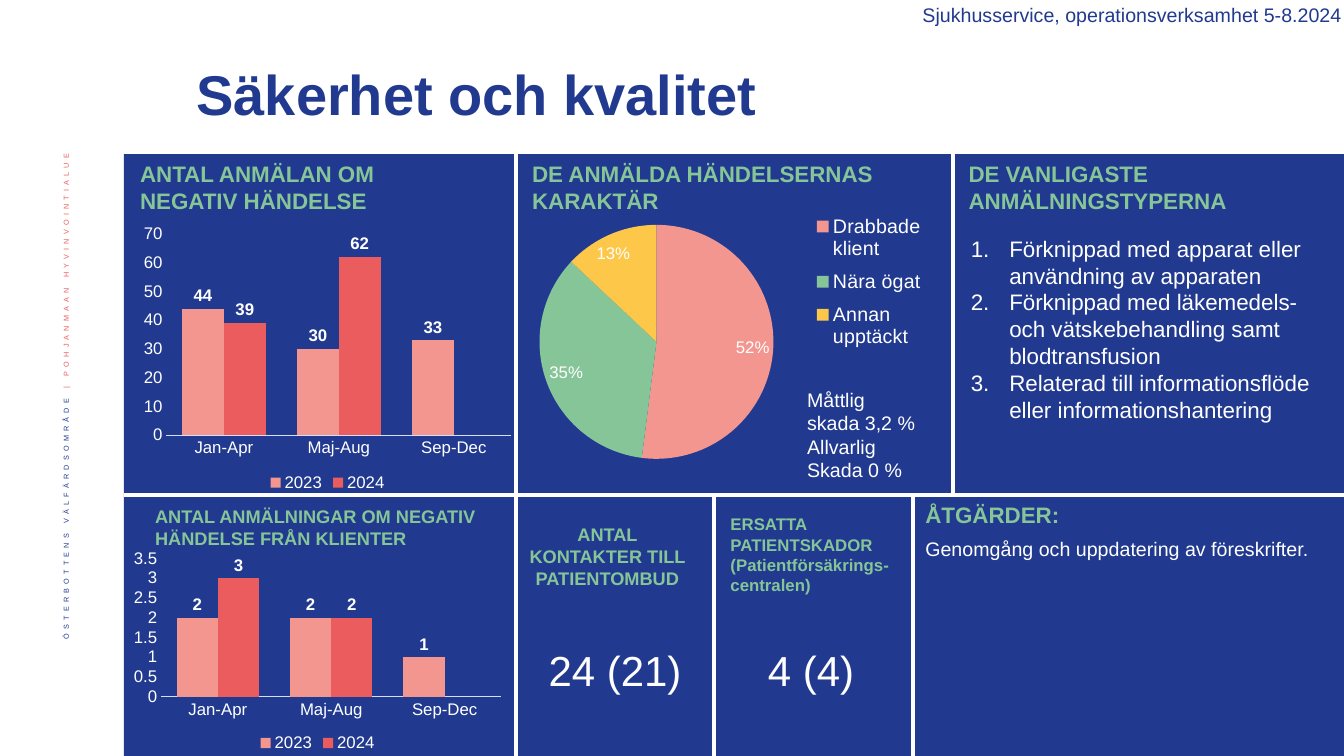
from dataclasses import dataclass

from lxml.etree import SubElement
from pptx import Presentation
from pptx.chart.data import CategoryChartData
from pptx.dml.color import RGBColor
from pptx.enum.chart import XL_CHART_TYPE, XL_LABEL_POSITION, XL_LEGEND_POSITION, XL_TICK_MARK
from pptx.enum.shapes import MSO_CONNECTOR, MSO_SHAPE
from pptx.enum.text import MSO_ANCHOR, MSO_AUTO_SIZE, PP_ALIGN
from pptx.oxml import parse_xml
from pptx.oxml.ns import nsdecls, qn
from pptx.util import Cm, Pt


@dataclass(frozen=True)
class Theme:
    font: str = "Arial"
    navy: RGBColor = RGBColor(0x21, 0x3A, 0x8F)
    white: RGBColor = RGBColor(0xFF, 0xFF, 0xFF)
    green: RGBColor = RGBColor(0x85, 0xC5, 0x98)
    pink: RGBColor = RGBColor(0xF3, 0x96, 0x90)
    red: RGBColor = RGBColor(0xEB, 0x5C, 0x5F)
    yellow: RGBColor = RGBColor(0xFD, 0xC8, 0x4A)
    axis: RGBColor = RGBColor(0xD6, 0xDD, 0xF6)
    title: Pt = Pt(40)
    figure: Pt = Pt(30)
    heading: Pt = Pt(16)
    body: Pt = Pt(14)
    subheading: Pt = Pt(13)
    small: Pt = Pt(12)
    side: Pt = Pt(9)


theme = Theme()


def style_font(font, size, color, bold=False):
    font.name, font.size, font.bold = theme.font, size, bold
    font.color.rgb = color


def fill_box(box, place, lines, size, color, bold=False, align=PP_ALIGN.LEFT):
    box.left, box.top, box.width, box.height = [Cm(length) for length in place]
    frame = box.text_frame
    frame.word_wrap = True
    frame.auto_size = MSO_AUTO_SIZE.NONE
    frame.text = "\n".join(lines)
    for para in frame.paragraphs:
        para.alignment = align
        para.space_before = Pt(0)
        style_font(para.font, size, color, bold)
    return frame


deck = Presentation()
deck.slide_width, deck.slide_height = Cm(33.87), Cm(19.05)
page = deck.slides.add_slide(deck.slide_layouts[1])
shapes = page.shapes

# Blue panel and white title band, both behind the placeholders
left, top, right, bottom = 3.12, 3.88, 33.87, 19.05
middle = 12.47
for depth, (place, color) in enumerate([
    ((left, 0, right - left, bottom), theme.navy),
    ((2.92, 0, right - 2.92, top), theme.white),
]):
    panel = shapes.add_shape(MSO_SHAPE.RECTANGLE, *[Cm(length) for length in place])
    panel.shadow.inherit = False
    panel.fill.solid()
    panel.fill.fore_color.rgb = color
    panel.line.fill.background()
    shapes._spTree.insert(2 + depth, panel._element)

# White lines that divide the panel
dividers = [(left, middle, right, middle)]
dividers += [(x, top, x, middle) for x in (13, 24.01)]
dividers += [(x, middle, x, bottom) for x in (13, 18, 23)]
for ends in dividers:
    divider = shapes.add_connector(MSO_CONNECTOR.STRAIGHT, *[Cm(length) for length in ends])
    divider.line.color.rgb = theme.white
    divider.line.width = Pt(3)
    SubElement(divider._element.spPr, qn("a:effectLst"))

# Title and numbered list
title_frame = fill_box(shapes.title, (4.7, 1.19, 25.35, 2.51), ["Säkerhet och kvalitet"],
                       theme.title, theme.navy, True)
title_frame.vertical_anchor = MSO_ANCHOR.MIDDLE
title_frame.paragraphs[0].line_spacing = 0.9

incident_types = [
    "Förknippad med apparat eller användning av apparaten",
    "Förknippad med läkemedels- och vätskebehandling samt blodtransfusion",
    "Relaterad till informationsflöde eller informationshantering",
]
list_frame = fill_box(page.placeholders[1], (24.21, 5.79, 9.65, 5.82), incident_types,
                      theme.heading, theme.white)
for para in list_frame.paragraphs:
    properties = para._p.get_or_add_pPr()
    properties.set("marL", str(Cm(0.97)))
    properties.set("indent", str(-Cm(0.97)))
    numbering = parse_xml(f'<a:buAutoNum {nsdecls("a")} type="arabicPeriod"/>')
    properties.insert_element_before(numbering, "a:tabLst", "a:defRPr", "a:extLst")

# Vertical side text
side_frame = fill_box(shapes.add_textbox(0, 0, 0, 0), (1.07, 3.47, 1.32, 14.55), [""],
                      theme.side, theme.navy, align=PP_ALIGN.RIGHT)
side_frame.vertical_anchor = MSO_ANCHOR.MIDDLE
side_frame._txBody.bodyPr.set("vert", "vert270")
side_para = side_frame.paragraphs[0]
side_para.line_spacing = 0.9
for words, color in [("ÖSTERBOTTENS VÄLFÄRDSOMRÅDE ", theme.navy),
                     ("| POHJANMAAN HYVINVOINTIALUE ", theme.red)]:
    span = side_para.add_run()
    span.text = words
    span.font.color.rgb = color
    properties = span._r.get_or_add_rPr()
    properties.set("baseline", "30000")
    properties.set("spc", "300")

# Green headings
for place, words, size, align in [
    ((3.28, 3.91, 7.9, 1.63), "ANTAL ANMÄLAN OM NEGATIV HÄNDELSE", theme.heading, PP_ALIGN.LEFT),
    ((13.16, 3.91, 10.62, 1.63), "DE ANMÄLDA HÄNDELSERNAS KARAKTÄR", theme.heading, PP_ALIGN.LEFT),
    ((24.16, 3.91, 9.07, 1.63), "DE VANLIGASTE ANMÄLNINGSTYPERNA", theme.heading, PP_ALIGN.LEFT),
    ((3.66, 12.6, 9.68, 1.37), "ANTAL ANMÄLNINGAR OM NEGATIV HÄNDELSE FRÅN KLIENTER",
     theme.subheading, PP_ALIGN.LEFT),
    ((13.03, 13.06, 4.55, 1.95), "ANTAL KONTAKTER TILL PATIENTOMBUD", theme.subheading, PP_ALIGN.CENTER),
    ((18.16, 12.83, 4.72, 2.31), "ERSATTA PATIENTSKADOR (Patientförsäkrings-centralen)",
     theme.small, PP_ALIGN.LEFT),
    ((23.07, 12.5, 10.24, 0.94), "ÅTGÄRDER:", theme.heading, PP_ALIGN.LEFT),
]:
    fill_box(shapes.add_textbox(0, 0, 0, 0), place, [words], size, theme.green, True, align)

# Header, key figures and remarks
harm_levels = ["Måttlig", "skada 3,2 %", "Allvarlig", "Skada 0 %"]
for place, lines, size, color, align in [
    ((18.96, -0.05, 15.11, 0.86), ["Sjukhusservice, operationsverksamhet 5-8.2024"],
     theme.body, theme.navy, PP_ALIGN.RIGHT),
    ((13, 16.12, 5, 1.55), ["24 (21)"], theme.figure, theme.white, PP_ALIGN.CENTER),
    ((17.94, 16.12, 5, 1.55), ["4 (4)"], theme.figure, theme.white, PP_ALIGN.CENTER),
    ((23.07, 13.4, 10.8, 0.86), ["Genomgång och uppdatering av föreskrifter."],
     theme.body, theme.white, PP_ALIGN.LEFT),
    ((20.09, 9.64, 3.96, 2.64), harm_levels, theme.body, theme.white, PP_ALIGN.LEFT),
]:
    fill_box(shapes.add_textbox(0, 0, 0, 0), place, lines, size, color, align=align)

# Column charts
for place, values_2023, values_2024, maximum, step in [
    ((3.43, 5.53, 9.65, 6.96), (44, 30, 33), (39, 62, None), 70, 10),
    ((3.18, 13.74, 9.65, 5.31), (2, 2, 1), (3, 2, None), 3.5, 0.5),
]:
    data = CategoryChartData()
    data.categories = ["Jan-Apr", "Maj-Aug", "Sep-Dec"]
    data.add_series("2023", values_2023)
    data.add_series("2024", values_2024)
    chart = shapes.add_chart(XL_CHART_TYPE.COLUMN_CLUSTERED, *[Cm(length) for length in place], data).chart
    style_font(chart.font, theme.small, theme.white)
    chart.has_title = False
    chart.has_legend = True
    chart.legend.position = XL_LEGEND_POSITION.BOTTOM
    chart.legend.include_in_layout = False
    for axis in (chart.category_axis, chart.value_axis):
        axis.has_major_gridlines = False
        axis.major_tick_mark = axis.minor_tick_mark = XL_TICK_MARK.NONE
    chart.category_axis.format.line.color.rgb = theme.axis
    chart.category_axis.format.line.width = Pt(0.75)
    chart.value_axis.format.line.fill.background()
    chart.value_axis.minimum_scale, chart.value_axis.maximum_scale = 0, maximum
    chart.value_axis.major_unit = step
    plot = chart.plots[0]
    plot.vary_by_categories = False
    plot.gap_width, plot.overlap = 75, 0
    for series, color in zip(plot.series, (theme.pink, theme.red)):
        series.format.fill.solid()
        series.format.fill.fore_color.rgb = color
        series.data_labels.show_value = True
        series.data_labels.position = XL_LABEL_POSITION.OUTSIDE_END
        style_font(series.data_labels.font, theme.small, theme.white, True)

# Pie chart
data = CategoryChartData()
data.categories = ["Drabbade klient", "Nära ögat", "Annan upptäckt"]
data.add_series("Series 1", (52, 35, 13))
pie = shapes.add_chart(XL_CHART_TYPE.PIE, Cm(13.05), Cm(5.01), Cm(10.92), Cm(7.21), data).chart
style_font(pie.font, theme.body, theme.white)
pie.has_title = False
pie.has_legend = True
pie.legend.position = XL_LEGEND_POSITION.RIGHT
pie.legend.include_in_layout = False
plot = pie.plots[0]
for index, color in enumerate((theme.pink, theme.green, theme.yellow)):
    slice_fill = plot.series[0].points[index].format.fill
    slice_fill.solid()
    slice_fill.fore_color.rgb = color
labels = plot.series[0].data_labels
labels.show_value, labels.show_percentage = False, True
labels.number_format, labels.number_format_is_linked = "0%", False
labels.position = XL_LABEL_POSITION.BEST_FIT
style_font(labels.font, theme.small, theme.white)

# Fixed places for the pie and its legend, as shares of the chart
for tag, index, target, place in [("c:plotArea", 0, '<c:layoutTarget val="inner"/>', (0.05, 0.08, 0.54, 0.84)),
                                  ("c:legend", 1, "", (0.67, 0.02, 0.28, 0.54))]:
    part = pie._chartSpace.chart.find(qn(tag))
    for layout in part.findall(qn("c:layout")):
        part.remove(layout)
    modes = '<c:xMode val="edge"/><c:yMode val="edge"/>'
    shares = "".join(f'<c:{side} val="{share}"/>' for side, share in zip("xywh", place))
    part.insert(index, parse_xml(f'<c:layout {nsdecls("c")}><c:manualLayout>{target}{modes}{shares}'
                                 "</c:manualLayout></c:layout>"))

deck.save("out.pptx")
